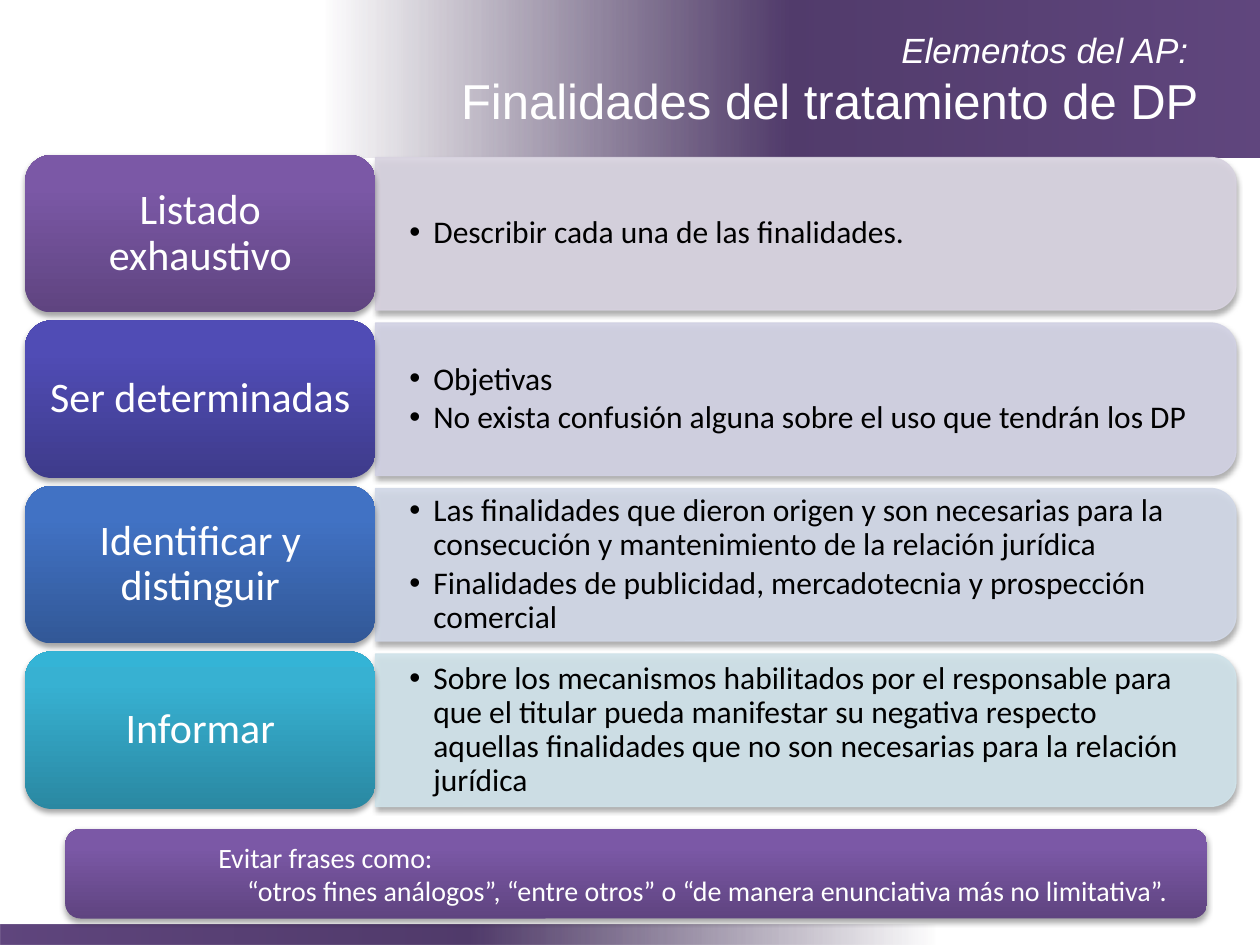
from lxml import etree
from pptx import Presentation
from pptx.dml.color import RGBColor
from pptx.enum.shapes import MSO_SHAPE as Preset
from pptx.enum.text import MSO_ANCHOR as Anchor, MSO_AUTO_SIZE as AutoSize, PP_ALIGN as Align
from pptx.oxml import parse_xml
from pptx.oxml.ns import nsdecls, qn
from pptx.util import Inches, Pt

HEADER_STOPS = [(0, "39294B", 0), (50, "513B6B", 100), (100, "60467E", 100)]
PURPLE = ["5F4480", "7B58A6", "7C57A8"]
LABEL_FONT = {"name": "Calibri", "size": Pt(24), "color": "FFFFFF"}
BULLET_FONT = {"name": "Calibri", "size": Pt(18), "color": "000000"}
NOTE_FONT = {"name": "Calibri", "size": Pt(16), "color": "FFFFFF"}
ROWS = [
    ("Listado exhaustivo", PURPLE, "D8D3E0",
     ["Describir cada una de las finalidades."]),
    ("Ser determinadas", ["3E3B8B", "504CB5", "4F4BB8"], "D2D2E4",
     ["Objetivas",
      "No exista confusión alguna sobre el uso que tendrán los DP"]),
    ("Identificar y distinguir", ["325897", "4172C4", "3F72C7"], "D1D8E7",
     ["Las finalidades que dieron origen y son necesarias para la consecución "
      "y mantenimiento de la relación jurídica",
      "Finalidades de publicidad, mercadotecnia y prospección comercial"]),
    ("Informar", ["2A88A2", "37B1D2", "34B4D6"], "D0E3EA",
     ["Sobre los mecanismos habilitados por el responsable para que el titular "
      "pueda manifestar su negativa respecto aquellas finalidades que no son "
      "necesarias para la relación jurídica"]),
]


def rgb(color):
    return RGBColor.from_string(color)


def set_values(target, values):
    for name, value in values.items():
        if name == "color":
            target.color.rgb = rgb(value)
        else:
            setattr(target, name, value)


def add_box(slide, preset, left, top, width, height):
    shape = slide.shapes.add_shape(
        preset, Inches(left), Inches(top), Inches(width), Inches(height))
    shape.shadow.inherit = False
    shape.line.fill.background()
    return shape


def set_gradient(shape, stops, angle):
    shape.fill.background()
    properties = shape._element.spPr
    stop_xml = "".join(
        f'<a:gs pos="{position * 1000}"><a:srgbClr val="{color}">'
        f'<a:alpha val="{alpha * 1000}"/></a:srgbClr></a:gs>'
        for position, color, alpha in stops)
    gradient = parse_xml(
        f'<a:gradFill {nsdecls("a")} rotWithShape="1"><a:gsLst>{stop_xml}</a:gsLst>'
        f'<a:lin ang="{angle * 60000}" scaled="0"/></a:gradFill>')
    properties.replace(properties.find(qn("a:noFill")), gradient)


def set_glossy(shape, colors):
    set_gradient(shape, [(p, c, 100) for p, c in zip((0, 80, 100), colors)], 270)
    add_shadow(shape)


def add_shadow(shape):
    effects = shape._element.spPr.find(qn("a:effectLst"))
    effects.append(parse_xml(
        f'<a:outerShdw {nsdecls("a")} blurRad="40000" dist="23000" dir="5400000" '
        'rotWithShape="0"><a:srgbClr val="000000"><a:alpha val="35000"/>'
        '</a:srgbClr></a:outerShdw>'))


def set_alpha(color_parent, percent):
    for color in color_parent.iter(qn("a:srgbClr")):
        etree.SubElement(color, qn("a:alpha"), val=str(percent * 1000))


def set_indent(paragraph, left, first=0):
    properties = paragraph._p.get_or_add_pPr()
    properties.set("marL", str(Inches(left)))
    properties.set("indent", str(Inches(first)))
    return properties


def write_paragraphs(frame, texts, font, **values):
    frame.word_wrap = True
    frame.vertical_anchor = Anchor.MIDDLE
    for index, text in enumerate(texts):
        paragraph = frame.add_paragraph() if index else frame.paragraphs[0]
        paragraph.text = text
        set_values(paragraph, values)
        set_values(paragraph.runs[0].font, font)
    return frame.paragraphs


def add_bands(slide):
    for box, rotation in (((2.58, 0, 7.42, 1.25), 0), ((0, 7.34, 7.42, 0.16), 180)):
        band = add_box(slide, Preset.RECTANGLE, *box)
        band.rotation = rotation
        set_gradient(band, HEADER_STOPS, 0)


def place_title(slide, left, top, width, height):
    title = slide.shapes.title
    slide.shapes._spTree.append(title._element)
    set_values(title, {"left": Inches(left), "top": Inches(top),
                       "width": Inches(width), "height": Inches(height)})
    title.text_frame.auto_size = AutoSize.NONE
    paragraphs = write_paragraphs(
        title.text_frame,
        ["Elementos del AP: ", "Finalidades del tratamiento de DP"],
        {"name": "Arial", "size": Pt(28), "color": "FFFFFF"}, alignment=Align.RIGHT)
    set_values(paragraphs[0].runs[0].font, {"size": Pt(20), "italic": True})


def add_panel(slide, color, bullets, left, top, width, height):
    panel = add_box(slide, Preset.ROUND_2_SAME_RECTANGLE,
                    left + (width - height) / 2, top + (height - width) / 2,
                    height, width)
    panel.rotation = 90
    panel.fill.solid()
    panel.fill.fore_color.rgb = rgb(color)
    set_values(panel.line, {"color": color, "width": Pt(0.75)})
    set_alpha(panel._element.spPr, 90)
    add_shadow(panel)

    box = slide.shapes.add_textbox(
        Inches(left), Inches(top + 0.06), Inches(width - 0.06), Inches(height - 0.12))
    frame = box.text_frame
    margins = {"left": 0.27, "right": 0.27, "top": 0.14, "bottom": 0.14}
    set_values(frame, {f"margin_{side}": Inches(size) for side, size in margins.items()})
    paragraphs = write_paragraphs(
        frame, bullets, BULLET_FONT, line_spacing=0.9, space_after=Pt(2.7))
    for paragraph in paragraphs:
        properties = set_indent(paragraph, 0.19, -0.19)
        etree.SubElement(properties, qn("a:buFont"), typeface="Arial")
        etree.SubElement(properties, qn("a:buChar"), char="•")


def add_row(slide, row, left, top, width, height):
    label, gradient, panel_color, bullets = row
    label_width = 2.78
    add_panel(slide, panel_color, bullets, left + label_width, top + 0.02,
              width - label_width, height - 0.04)
    shape = add_box(slide, Preset.ROUNDED_RECTANGLE, left, top, label_width, height)
    set_glossy(shape, gradient)
    write_paragraphs(shape.text_frame, [label], LABEL_FONT,
                     alignment=Align.CENTER, line_spacing=0.9)


def add_note(slide, left, top, width, height):
    note = add_box(slide, Preset.ROUNDED_RECTANGLE, left, top, width, height)
    set_glossy(note, PURPLE)
    paragraphs = write_paragraphs(
        note.text_frame,
        ["Evitar frases como:",
         " “otros fines análogos”, “entre otros” o “de manera enunciativa más no limitativa”."],
        NOTE_FONT)
    for paragraph, alignment in zip(paragraphs, (Align.JUSTIFY, Align.CENTER)):
        paragraph.alignment = alignment
        set_indent(paragraph, 1.08)


def main():
    presentation = Presentation()
    presentation.slide_width = Inches(10)
    presentation.slide_height = Inches(7.5)
    slide = presentation.slides.add_slide(presentation.slide_layouts[5])
    add_bands(slide)
    place_title(slide, 3.35, 0, 6.26, 1.25)
    first_top, last_top = 1.23, 5.17
    pitch = (last_top - first_top) / (len(ROWS) - 1)
    for index, row in enumerate(ROWS):
        add_row(slide, row, 0.2, first_top + index * pitch, 9.61, 1.25)
    add_note(slide, 0.52, 6.58, 9.06, 0.71)
    presentation.save("out.pptx")


if __name__ == "__main__":
    main()
